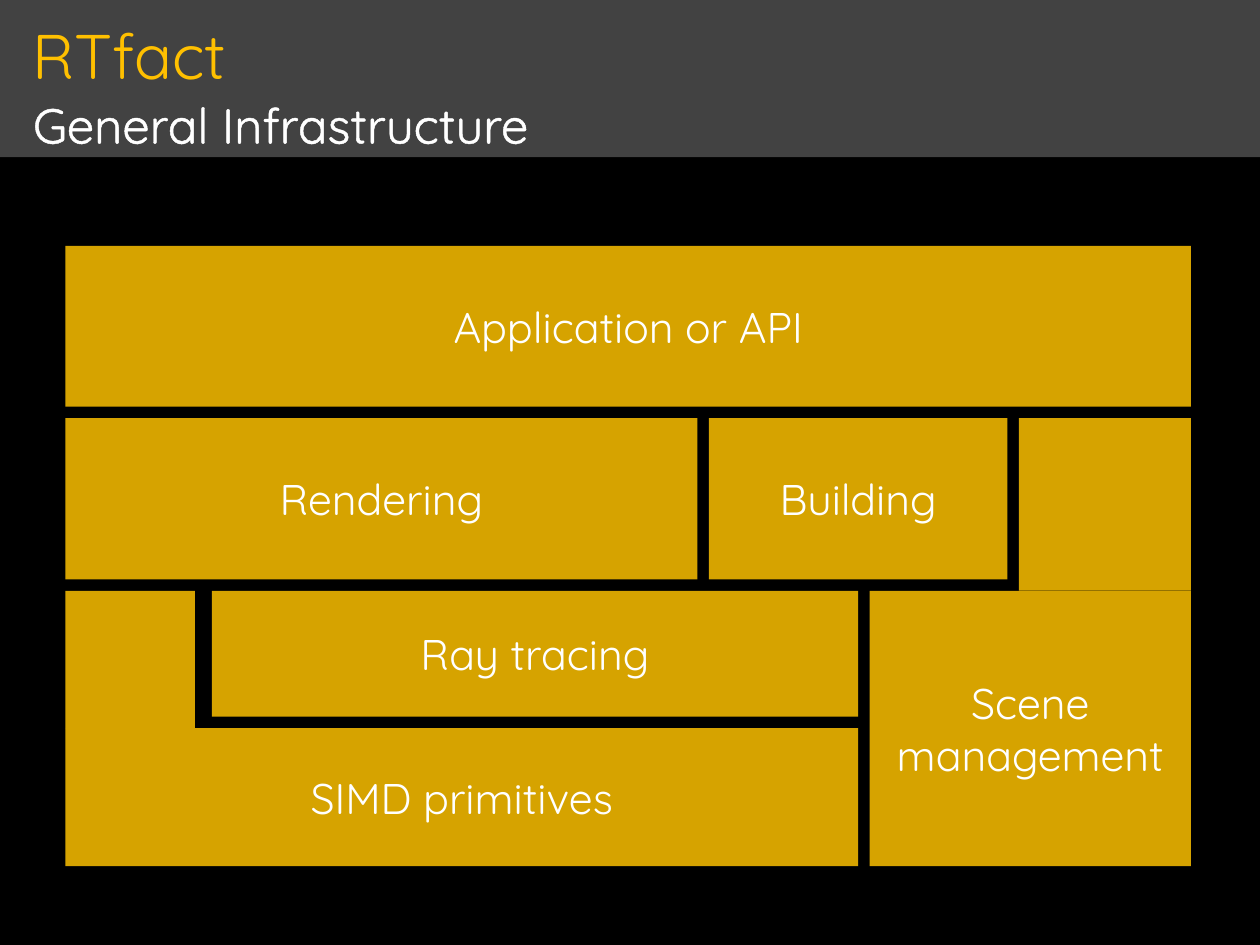
from lxml import etree
from pptx import Presentation
from pptx import util as u
from pptx.dml.color import RGBColor
from pptx.enum import shapes, text
from pptx.oxml import ns

BLACK = RGBColor(0x00, 0x00, 0x00)
WHITE = RGBColor(0xFF, 0xFF, 0xFF)
AMBER = RGBColor(0xFF, 0xC0, 0x00)
GOLD = RGBColor(0xD6, 0xA3, 0x00)
FONT = "Quicksand"


def add_block(container, left, top, right, bottom, color):
    shape = container.shapes.add_shape(
        shapes.MSO_SHAPE.RECTANGLE,
        u.Cm(left), u.Cm(top), u.Cm(right - left), u.Cm(bottom - top))
    shape.shadow.inherit = False
    shape.fill.solid()
    shape.fill.fore_color.rgb = color
    shape.line.fill.background()
    return shape


def write_text(shape, content, size, color, alignment):
    frame = shape.text_frame
    frame.text = content
    for paragraph in frame.paragraphs:
        paragraph.alignment = alignment
        for run in paragraph.runs:
            run.font.name = FONT
            run.font.size = u.Pt(size)
            run.font.color.rgb = color


presentation = Presentation()
presentation.slide_width = u.Cm(25.4)
presentation.slide_height = u.Cm(19.05)
slide = presentation.slides.add_slide(presentation.slide_layouts[1])
slide.background.fill.solid()
slide.background.fill.fore_color.rgb = BLACK

banner = add_block(slide, 0, 0, 25.4, 3.17, WHITE)
banner_color = banner._element.spPr.find(".//" + ns.qn("a:srgbClr"))
etree.SubElement(banner_color, ns.qn("a:alpha"), val="26000")
slide.shapes._spTree.insert(2, banner._element)

title = slide.shapes.title
subtitle = slide.placeholders[1]
headings = [
    (title, "RTfact", 0.18, 1.83, 36, AMBER, text.MSO_ANCHOR.MIDDLE),
    (subtitle, "General Infrastructure", 1.78, 1.4, 28, WHITE, text.MSO_ANCHOR.TOP),
]
for shape, content, top, height, size, color, anchor in headings:
    shape.left, shape.top = u.Cm(0.41), u.Cm(top)
    shape.width, shape.height = u.Cm(24.69), u.Cm(height)
    write_text(shape, content, size, color, text.PP_ALIGN.LEFT)
    shape.text_frame.auto_size = text.MSO_AUTO_SIZE.NONE
    shape.text_frame.vertical_anchor = anchor

paragraph = subtitle.text_frame.paragraphs[0]
properties = paragraph._p.get_or_add_pPr()
properties.set("marL", "0")
properties.set("indent", "0")
etree.SubElement(properties, ns.qn("a:buNone"))
run_properties = paragraph.runs[0]._r.get_or_add_rPr()
outline = etree.Element(ns.qn("a:ln"), w=str(u.Pt(1.45)))
outline_fill = etree.SubElement(outline, ns.qn("a:solidFill"))
etree.SubElement(outline_fill, ns.qn("a:srgbClr"), val=str(WHITE))
run_properties.insert(0, outline)

GAP = 0.23
LEFT, RIGHT = 1.32, 24.01
APPLICATION_TOP, RENDERING_TOP, TRACING_TOP, SIMD_TOP = 4.96, 8.43, 11.91, 14.68
BOTTOM = 17.46
BUILDING_LEFT, SCENE_LEFT, SCENE_ARM_LEFT = 14.29, 17.53, 20.54

components = [
    [("", LEFT, TRACING_TOP, 3.93, SIMD_TOP),
     ("SIMD primitives", LEFT, SIMD_TOP, SCENE_LEFT - GAP, BOTTOM)],
    [("Ray tracing", 4.27, TRACING_TOP, SCENE_LEFT - GAP, SIMD_TOP - GAP)],
    [("Scene\nmanagement", SCENE_LEFT, TRACING_TOP, RIGHT, BOTTOM),
     ("", SCENE_ARM_LEFT, RENDERING_TOP, RIGHT, TRACING_TOP)],
    [("Building", BUILDING_LEFT, RENDERING_TOP, SCENE_ARM_LEFT - GAP, TRACING_TOP - GAP)],
    [("Rendering", LEFT, RENDERING_TOP, BUILDING_LEFT - GAP, TRACING_TOP - GAP)],
    [("Application or API", LEFT, APPLICATION_TOP, RIGHT, RENDERING_TOP - GAP)],
]
for blocks in components:
    container = slide.shapes.add_group_shape() if len(blocks) > 1 else slide
    for label, left, top, right, bottom in blocks:
        block = add_block(container, left, top, right, bottom, GOLD)
        if label:
            write_text(block, label, 24.5, WHITE, text.PP_ALIGN.CENTER)
            block.text_frame.vertical_anchor = text.MSO_ANCHOR.MIDDLE

presentation.save("out.pptx")
